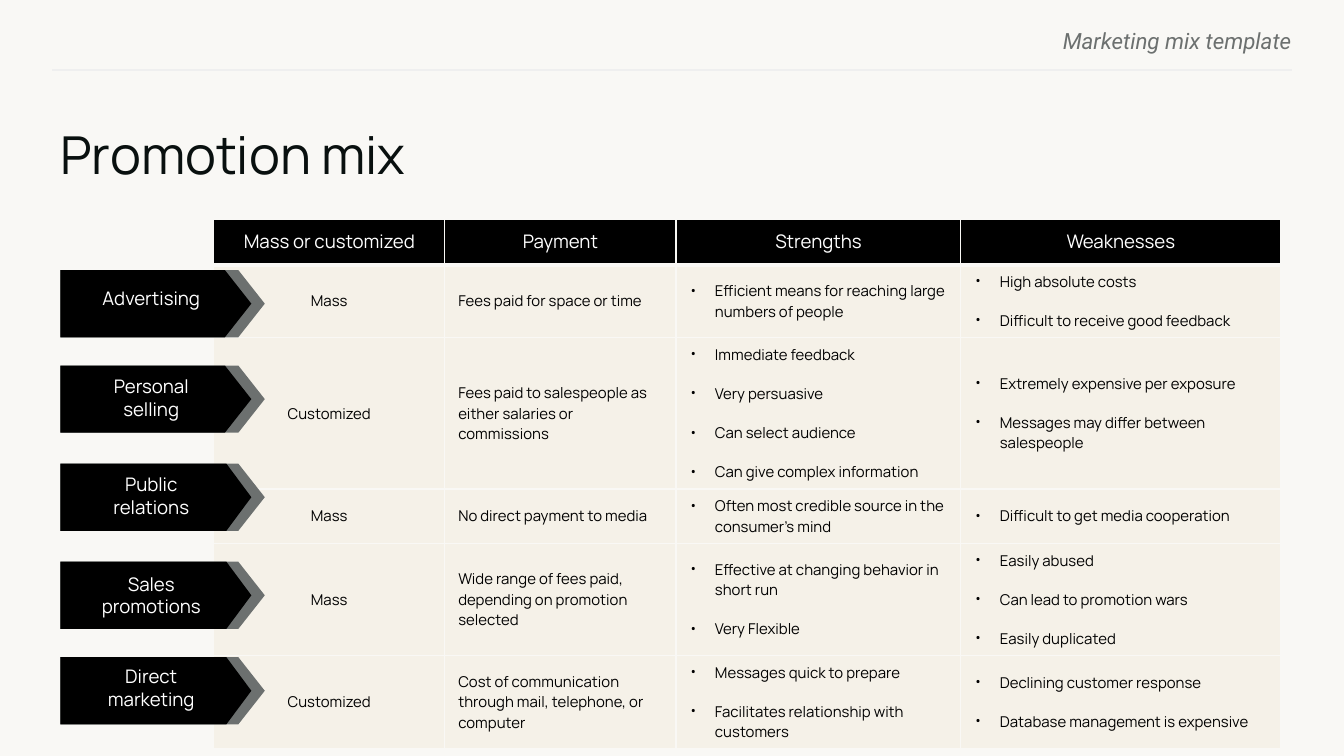
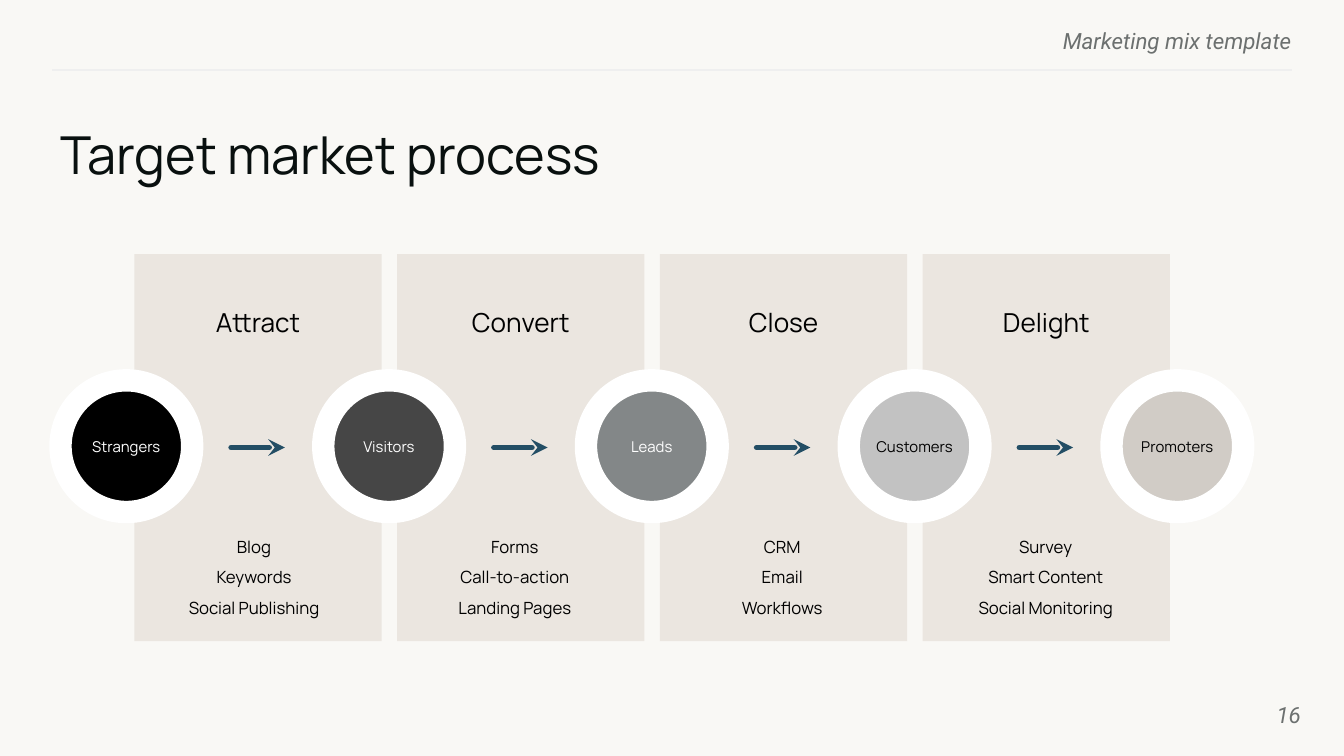
from lxml import etree
from pptx import Presentation
from pptx.dml.color import RGBColor
from pptx.enum.shapes import MSO_CONNECTOR, MSO_SHAPE
from pptx.enum.text import MSO_ANCHOR, MSO_AUTO_SIZE, PP_ALIGN
from pptx.oxml.ns import qn
from pptx.util import Inches, Pt

LEFT, CENTER, RIGHT = PP_ALIGN.LEFT, PP_ALIGN.CENTER, PP_ALIGN.RIGHT
TOP, MIDDLE = MSO_ANCHOR.TOP, MSO_ANCHOR.MIDDLE
GROW, FIXED = MSO_AUTO_SIZE.SHAPE_TO_FIT_TEXT, MSO_AUTO_SIZE.NONE
RECTANGLE, OVAL, PENTAGON = MSO_SHAPE.RECTANGLE, MSO_SHAPE.OVAL, MSO_SHAPE.PENTAGON
STRAIGHT = MSO_CONNECTOR.STRAIGHT

# Shared colours and formats
colour = RGBColor.from_string
PAPER, BLACK, WHITE, GREY = "F9F8F5", "000000", "FFFFFF", "6C706F"
CELL, PANEL, ARROW, RULE, TITLE = "F5F1E8", "EBE6E0", "234E65", "EFEFEF", "09100F"

HEADING = {"name": "Manrope", "size": Pt(28)}
NOTE = {"name": "Roboto", "size": Pt(12), "italic": True}
LABEL = {"name": "Manrope", "size": Pt(10), "bold": False}
SMALL = {"name": "Manrope", "size": Pt(8), "bold": False}
STAGE = {"name": "Manrope", "size": Pt(14)}
LIST = {"name": "Manrope", "size": Pt(9)}

SIDES = ("margin_left", "margin_top", "margin_right", "margin_bottom")
FLUSH = dict.fromkeys(SIDES, 0) | {
    "word_wrap": True, "auto_size": FIXED, "vertical_anchor": TOP}
PADDED = dict.fromkeys(SIDES, Inches(0.1)) | {
    "word_wrap": True, "auto_size": GROW, "vertical_anchor": TOP}
SLIM = PADDED | {"margin_top": Inches(0.05), "margin_bottom": Inches(0.05)}
ROUND = SLIM | {"margin_left": 0, "margin_right": 0,
                "auto_size": FIXED, "vertical_anchor": MIDDLE}
HEAD_CELL = dict.fromkeys(SIDES, Inches(0.05)) | {"vertical_anchor": MIDDLE}
BODY_CELL = HEAD_CELL | {"margin_left": Inches(0.1), "margin_right": Inches(0.1)}


def write(holder, lines, frame_look, font_look, ink, para_look):
    """Fill a text frame or table cell with formatted paragraphs."""
    for name, value in frame_look.items():
        setattr(holder, name, value)
    frame = getattr(holder, "text_frame", holder)
    for index, line in enumerate(lines):
        para = frame.add_paragraph() if index else frame.paragraphs[0]
        for name, value in para_look.items():
            setattr(para, name, value)
        span = para.add_run()
        span.text = line
        for name, value in font_look.items():
            setattr(span.font, name, value)
        span.font.color.rgb = colour(ink)


def add_block(shapes, kind, left, top, width, height, fill):
    """Add a flat preset shape without outline or shadow."""
    block = shapes.add_shape(kind, Inches(left), Inches(top),
                             Inches(width), Inches(height))
    block.shadow.inherit = False
    block.fill.solid()
    block.fill.fore_color.rgb = colour(fill)
    block.line.fill.background()
    return block


# Widescreen deck, 16 to 9
deck = Presentation()
deck.slide_width = Inches(10)
deck.slide_height = Inches(10) * 9 // 16

# Both pages: background, header, rule and title
pages = []
for title in ("Promotion mix", "Target market process"):
    page = deck.slides.add_slide(deck.slide_layouts[5])
    pages.append(page)
    page.background.fill.solid()
    page.background.fill.fore_color.rgb = colour(PAPER)

    header = page.shapes.add_textbox(Inches(5.76), Inches(0.2), Inches(3.85), Inches(0.18))
    write(header.text_frame, ["Marketing mix template"], FLUSH, NOTE, GREY,
          {"alignment": RIGHT})

    rule = page.shapes.add_connector(STRAIGHT, Inches(9.61), Inches(0.52),
                                     Inches(0.39), Inches(0.52))
    rule.line.color.rgb = colour(RULE)
    rule.line.width = Pt(0.75)
    etree.SubElement(rule._element.spPr, qn("a:effectLst"))

    box = page.shapes.title
    box.left, box.top, box.width, box.height = (
        Inches(value) for value in (0.45, 0.91, 9.23, 0.51))
    write(box.text_frame, [title], FLUSH, HEADING, TITLE,
          {"alignment": LEFT, "space_after": Pt(10)})

mix_page, market_page = pages

# Promotion mix: table
HEADERS = ["Mass or customized", "Payment", "Strengths", "Weaknesses"]
CHANNELS = [
    ["Mass", "Fees paid for space or time",
     ["Efficient means for reaching large numbers of people"],
     ["High absolute costs", "Difficult to receive good feedback"]],
    ["Customized", "Fees paid to salespeople as either salaries or commissions",
     ["Immediate feedback", "Very persuasive", "Can select audience",
      "Can give complex information"],
     ["Extremely expensive per exposure", "Messages may differ between salespeople"]],
    ["Mass", "No direct payment to media",
     ["Often most credible source in the consumer’s mind"],
     ["Difficult to get media cooperation"]],
    ["Mass", "Wide range of fees paid, depending on promotion selected",
     ["Effective at changing behavior in short run", "Very Flexible"],
     ["Easily abused", "Can lead to promotion wars", "Easily duplicated"]],
    ["Customized", "Cost of communication through mail, telephone, or computer",
     ["Messages quick to prepare", "Facilitates relationship with customers"],
     ["Declining customer response", "Database management is expensive"]],
]
COLUMN_WIDTHS = [1.72, 1.72, 2.12, 2.38]
ROW_HEIGHTS = [0.35, 0.44, 0.59, 0.29, 0.44, 0.44]

table = mix_page.shapes.add_table(
    len(ROW_HEIGHTS), len(COLUMN_WIDTHS), Inches(1.59), Inches(1.62),
    Inches(sum(COLUMN_WIDTHS)), Inches(sum(ROW_HEIGHTS))).table
table.first_row = table.horz_banding = False
for column, width in zip(table.columns, COLUMN_WIDTHS):
    column.width = Inches(width)
for row, height in zip(table.rows, ROW_HEIGHTS):
    row.height = Inches(height)

for r, entries in enumerate([HEADERS] + CHANNELS):
    for c, entry in enumerate(entries):
        cell = table.cell(r, c)
        is_list = isinstance(entry, list)
        para_look = {"alignment": CENTER if r == 0 or c == 0 else LEFT}
        write(cell, entry if is_list else [entry],
              BODY_CELL if r else HEAD_CELL, SMALL if r else LABEL,
              BLACK if r else WHITE, para_look)
        cell.fill.solid()
        cell.fill.fore_color.rgb = colour(CELL if r else BLACK)

        # Bullets and spacing
        paragraphs = cell.text_frame.paragraphs
        paragraphs[-1].space_after = Pt(10)
        if is_list:
            for index, para in enumerate(paragraphs):
                if index:
                    para.space_before = Pt(10)
                props = para._p.get_or_add_pPr()
                props.set("marL", str(Inches(0.19)))
                props.set("indent", str(Inches(-0.18)))
                bullet_colour = etree.SubElement(props, qn("a:buClr"))
                etree.SubElement(bullet_colour, qn("a:srgbClr"), val=BLACK)
                etree.SubElement(props, qn("a:buFont"), typeface="Roboto")
                etree.SubElement(props, qn("a:buChar"), char="•")

        # Borders, heavier around the header row
        cell_props = cell._tc.get_or_add_tcPr()
        for place, side in enumerate("LRTB"):
            heavy = (r == 0 and side in "TB") or (r == 1 and side == "T")
            edge = etree.Element(qn("a:ln" + side), w=str(Pt(2.25 if heavy else 0.75)))
            edge_fill = etree.SubElement(edge, qn("a:solidFill"))
            etree.SubElement(edge_fill, qn("a:srgbClr"), val=PAPER)
            cell_props.insert(place, edge)

# Promotion mix: channel pointers (text, pointer top, point depth, label top, label height)
POINTERS = [
    ("Advertising", 2.01, 0.393, 2.05, 0.37),
    ("Personal selling", 2.72, 0.393, 2.69, 0.54),
    ("Public relations", 3.45, 0.371, 3.42, 0.54),
    ("Sales promotions", 4.18, 0.371, 4.16, 0.54),
    ("Direct marketing", 4.89, 0.371, 4.85, 0.54),
]
for text, top, depth, label_top, label_height in POINTERS:
    for width, fill, point in ((1.52, GREY, 0.393), (1.42, BLACK, depth)):
        pointer = add_block(mix_page.shapes, PENTAGON, 0.45, top, width, 0.5, fill)
        pointer.adjustments[0] = point
    label = mix_page.shapes.add_textbox(Inches(0.54), Inches(label_top),
                                        Inches(1.17), Inches(label_height))
    write(label.text_frame, [text], PADDED, LABEL, WHITE,
          {"alignment": CENTER, "space_after": Pt(10)})

# Target market process: page number
number = market_page.shapes.add_textbox(Inches(9.08), Inches(5.1), Inches(0.6), Inches(0.43))
write(number.text_frame, ["16"], FLUSH | {"vertical_anchor": MIDDLE}, NOTE, GREY,
      {"alignment": RIGHT})

# Target market process: panels (stage, heading width, list left, list width, list)
STEP = 1.955
STAGES = [
    ("Attract", 1.42, 1.22, 1.34, ["Blog", "Keywords", "Social Publishing"]),
    ("Convert", 1.54, 3.12, 1.42, ["Forms", "Call-to-action", "Landing Pages"]),
    ("Close", 1.25, 5.19, 1.26, ["CRM", "Email", "Workflows"]),
    ("Delight", 1.49, 7.07, 1.42, ["Survey", "Smart Content", "Social Monitoring"]),
]
for i, (stage, width, *_) in enumerate(STAGES):
    group = market_page.shapes.add_group_shape()
    left = 1 + i * STEP
    add_block(group.shapes, RECTANGLE, left, 1.89, 1.84, 2.88, PANEL)
    heading = add_block(group.shapes, RECTANGLE, left + (1.84 - width) / 2, 2.23,
                        width, 0.34, PANEL)
    write(heading.text_frame, [stage], SLIM, STAGE, BLACK, {"alignment": CENTER})

# Target market process: audience circles
AUDIENCES = [
    ("Strangers", BLACK, WHITE), ("Visitors", "464646", WHITE), ("Leads", "838788", WHITE),
    ("Customers", "C2C2C2", BLACK), ("Promoters", "D1CCC6", BLACK),
]
for i, (audience, fill, ink) in enumerate(AUDIENCES):
    circle = add_block(market_page.shapes, OVAL, 0.45 + i * STEP, 2.83, 0.98, 0.98, fill)
    circle.line.color.rgb = colour(WHITE)
    circle.line.width = Pt(12)
    write(circle.text_frame, [audience], ROUND, SMALL, ink, {"alignment": CENTER})

# Target market process: arrows and lists
for i, (_, _, left, width, items) in enumerate(STAGES):
    start = 1.72 + i * STEP
    arrow = market_page.shapes.add_connector(STRAIGHT, Inches(start), Inches(3.33),
                                             Inches(start + 0.4), Inches(3.33))
    arrow.line.color.rgb = colour(ARROW)
    arrow.line.width = Pt(3)
    outline = arrow._element.spPr.find(qn("a:ln"))
    outline.set("cap", "rnd")
    etree.SubElement(outline, qn("a:tailEnd"), type="stealth")
    etree.SubElement(arrow._element.spPr, qn("a:effectLst"))

    box = market_page.shapes.add_textbox(Inches(left), Inches(3.87),
                                         Inches(width), Inches(0.71))
    write(box.text_frame, items, SLIM, LIST, BLACK,
          {"alignment": CENTER, "line_spacing": 1.5})

deck.save("out.pptx")
